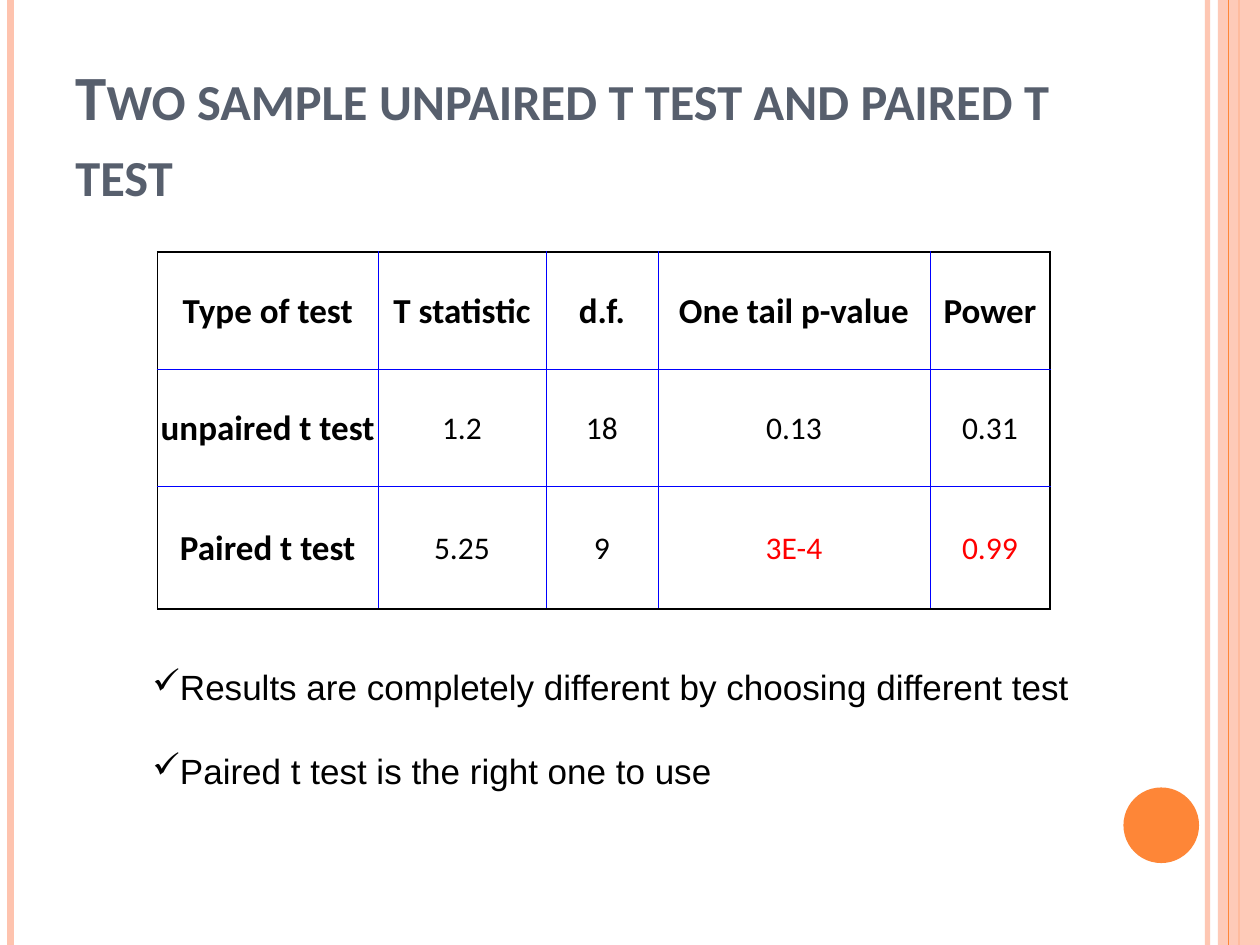
import lxml.etree
import pptx
import pptx.dml.color
import pptx.enum.shapes
import pptx.enum.text
import pptx.oxml.ns
import pptx.util

Pt = pptx.util.Pt
qn = pptx.oxml.ns.qn
RGB = pptx.dml.color.RGBColor.from_string
ALIGN = pptx.enum.text.PP_ALIGN
ANCHOR = pptx.enum.text.MSO_ANCHOR


class Theme:
    peach, orange = "FEC3AE", "FE8637"
    slate, black, red, blue = "575F6D", "000000", "FF0000", "0000FF"
    heading_font, body_font = "Calibri", "Arial"
    title_size, label_size, value_size, note_size = 36, 20, 18, 20
    outer_border, inner_border = 1, 0.5


WIDTH, HEIGHT = 720, 540
COLUMNS = [126, 96, 64, 155.5, 68.5]
ROWS = [67, 67, 70]
RESULTS = [
    ["Type of test", "T statistic", "d.f.", "One tail p-value", "Power"],
    ["unpaired t test", "1.2", "18", "0.13", "0.31"],
    ["Paired t test", "5.25", "9", "3E-4", "0.99"],
]
HIGHLIGHTS = {"3E-4", "0.99"}
CONCLUSIONS = [
    "Results are completely different by choosing different test",
    "Paired t test is the right one to use",
]


def set_opacity(shape, percent):
    for color in shape.element.spPr.iter(qn("a:srgbClr")):
        lxml.etree.SubElement(color, qn("a:alpha"), val=str(percent * 1000))


def style_font(paragraph, name, size, color, bold=False):
    font = paragraph.font
    font.name, font.size, font.bold = name, Pt(size), bold
    font.color.rgb = RGB(color)
    return font


def add_stripe(slide, x, color, width, opacity=100):
    """Draw a full-height vertical line."""
    stripe = slide.shapes.add_connector(
        pptx.enum.shapes.MSO_CONNECTOR.STRAIGHT, Pt(x), Pt(0), Pt(x), Pt(HEIGHT))
    stripe.line.color.rgb = RGB(color)
    stripe.line.width = Pt(width)
    lxml.etree.SubElement(stripe.element.spPr, qn("a:effectLst"))
    if opacity < 100:
        set_opacity(stripe, opacity)


def add_solid(slide, kind, left, top, width, height, color, opacity=100):
    solid = slide.shapes.add_shape(kind, Pt(left), Pt(top), Pt(width), Pt(height))
    solid.shadow.inherit = False
    solid.fill.solid()
    solid.fill.fore_color.rgb = RGB(color)
    if opacity < 100:
        set_opacity(solid, opacity)
    solid.line.fill.background()


def add_decoration(slide):
    kinds = pptx.enum.shapes.MSO_SHAPE
    add_stripe(slide, 690, Theme.peach, 3, opacity=93)
    add_stripe(slide, 6, Theme.peach, 4.5)
    add_stripe(slide, 708, Theme.orange, 1.5)
    add_solid(slide, kinds.RECTANGLE, 696, 0, 24, HEIGHT, Theme.peach, opacity=87)
    add_stripe(slide, 702, Theme.orange, 0.75)
    add_solid(slide, kinds.OVAL, 642, 450, 43.2, 43.2, Theme.orange)


def add_title(slide, text):
    frame = slide.shapes.add_textbox(Pt(36), Pt(33), Pt(588), Pt(90)).text_frame
    frame.word_wrap = True
    frame.vertical_anchor = ANCHOR.BOTTOM
    frame.text = text
    font = style_font(frame.paragraphs[0], Theme.heading_font, Theme.title_size,
                      Theme.slate, bold=True)
    font._rPr.set("cap", "small")


def set_borders(cell, row, column):
    """Black on the table's outer edge, thin blue inside."""
    outer_sides = {
        "L": column == 0, "R": column == len(COLUMNS) - 1,
        "T": row == 0, "B": row == len(ROWS) - 1,
    }
    properties = cell._tc.get_or_add_tcPr()
    for side, outer in outer_sides.items():
        width = Theme.outer_border if outer else Theme.inner_border
        border = lxml.etree.SubElement(properties, qn(f"a:ln{side}"), w=str(Pt(width)))
        fill = lxml.etree.SubElement(border, qn("a:solidFill"))
        lxml.etree.SubElement(fill, qn("a:srgbClr"),
                              val=Theme.black if outer else Theme.blue)


def add_results_table(slide):
    table = slide.shapes.add_table(len(ROWS), len(COLUMNS), Pt(90), Pt(144),
                                   Pt(sum(COLUMNS)), Pt(sum(ROWS))).table
    table.first_row = table.horz_banding = False
    for column, width in zip(table.columns, COLUMNS):
        column.width = Pt(width)
    for row, height in zip(table.rows, ROWS):
        row.height = Pt(height)

    for r, texts in enumerate(RESULTS):
        for c, text in enumerate(texts):
            cell = table.cell(r, c)
            set_borders(cell, r, c)
            cell.fill.background()
            cell.margin_left = cell.margin_right = cell.margin_top = Pt(0.75)
            cell.margin_bottom = Pt(0)
            cell.vertical_anchor = ANCHOR.MIDDLE
            cell.text = text
            label = r == 0 or c == 0
            paragraph = cell.text_frame.paragraphs[0]
            paragraph.alignment = ALIGN.CENTER
            style_font(paragraph, Theme.heading_font,
                       Theme.label_size if label else Theme.value_size,
                       Theme.red if text in HIGHLIGHTS else Theme.black, bold=label)


def add_conclusions(slide):
    frame = slide.shapes.add_textbox(Pt(80), Pt(377), Pt(542), Pt(80)).text_frame
    frame.word_wrap = False
    for i, text in enumerate(CONCLUSIONS):
        paragraph = frame.add_paragraph() if i else frame.paragraphs[0]
        paragraph.text = text
        properties = paragraph._p.get_or_add_pPr()
        lxml.etree.SubElement(properties, qn("a:buChar"), char="✓")
        paragraph.space_before = Pt(24 if i else 0)
        style_font(paragraph, Theme.body_font, Theme.note_size, Theme.black)


def main():
    presentation = pptx.Presentation()
    presentation.slide_width, presentation.slide_height = Pt(WIDTH), Pt(HEIGHT)
    slide = presentation.slides.add_slide(presentation.slide_layouts[6])

    add_decoration(slide)
    add_title(slide, "Two sample unpaired t test and paired t test")
    add_results_table(slide)
    add_conclusions(slide)

    presentation.save("out.pptx")


if __name__ == "__main__":
    main()
